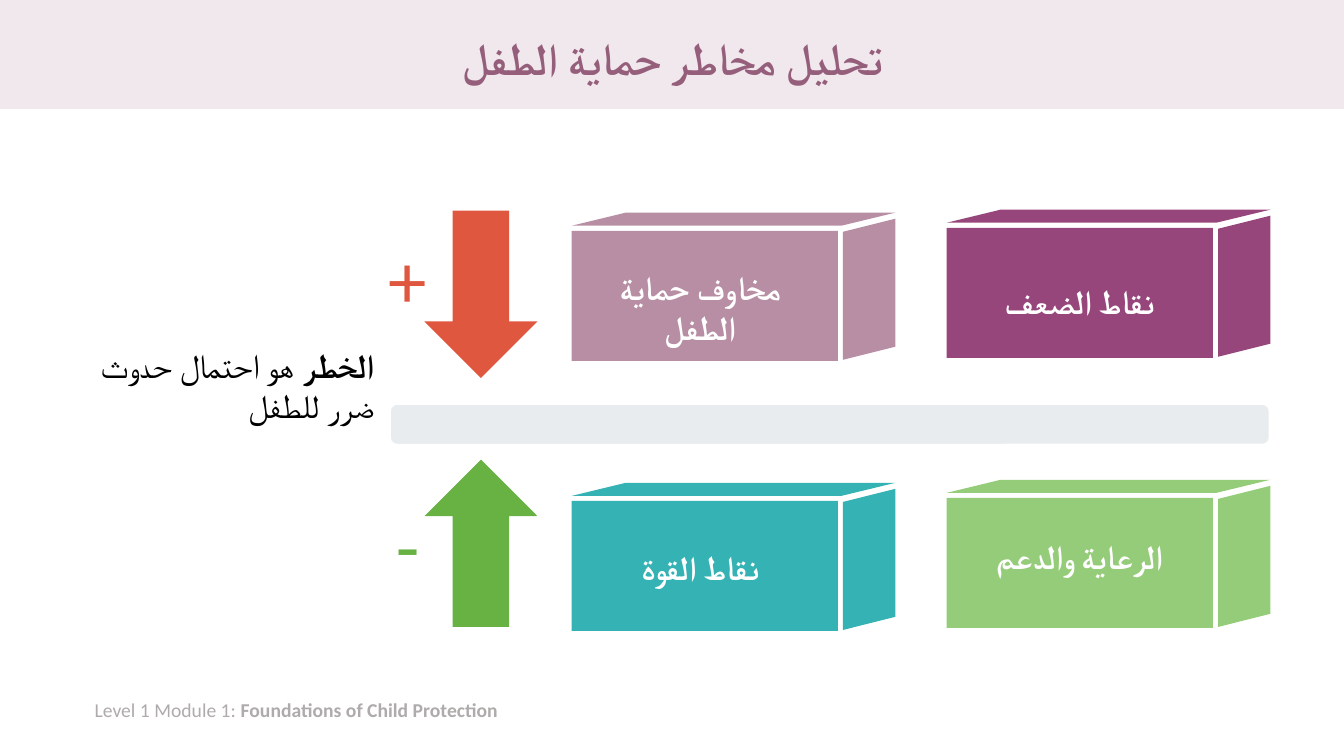
from pptx import Presentation
from pptx.dml.color import RGBColor
from pptx.enum.shapes import MSO_SHAPE as Shape
from pptx.enum.text import MSO_ANCHOR as Anchor, PP_ALIGN as Align
from pptx.oxml.ns import qn
from pptx.util import Inches, Pt
from lxml.etree import SubElement

COLORS = {
    "band": "F1E8ED", "title": "955F7B", "footer": "AFABAB", "text": "000000",
    "white": "FFFFFF", "bar": "E8ECEF", "risk": "E05740", "safety": "68B143",
    "concerns": "B78EA3", "weaknesses": "97467C",
    "strengths": "35B2B4", "support": "95CC79",
}


class SlideBuilder:
    def __init__(self, presentation):
        self.slide = presentation.slides.add_slide(presentation.slide_layouts[5])
        self.font = "Calibri"

    def color(self, name):
        return RGBColor.from_string(COLORS[name])

    def shape(self, kind, box, fill, line=None, parent=None):
        shapes = (parent or self.slide).shapes
        shape = shapes.add_shape(kind, *map(Inches, box))
        shape.shadow.inherit = False
        shape.fill.solid()
        shape.fill.fore_color.rgb = self.color(fill)
        if line:
            shape.line.color.rgb = self.color(line)
            shape.line.width = Pt(1)
        else:
            shape.line.fill.background()
        return shape

    def add_runs(self, frame, runs, size, color, align=Align.CENTER, rtl=True,
                 font=None, script_font=True):
        """Fill the frame with (text, bold) runs; script_font also covers Arabic."""
        frame.word_wrap = True
        paragraph = frame.paragraphs[0]
        paragraph.alignment = align
        if rtl:
            paragraph._p.get_or_add_pPr().set("rtl", "1")
        for text, bold in runs:
            run = paragraph.add_run()
            run.text = text
            run.font.name = font or self.font
            run.font.size = Pt(size)
            run.font.bold = bold
            run.font.color.rgb = self.color(color)
            if script_font:
                properties = run._r.get_or_add_rPr()
                SubElement(properties, qn("a:cs"), typeface=font or self.font)
        return paragraph

    def text(self, box, runs, size, color, **style):
        text_box = self.slide.shapes.add_textbox(*map(Inches, box))
        self.add_runs(text_box.text_frame, runs, size, color, **style)

    def title(self, box, text):
        title = self.slide.shapes.title
        title.left, title.top, title.width, title.height = map(Inches, box)
        title.text_frame.vertical_anchor = Anchor.MIDDLE
        paragraph = self.add_runs(title.text_frame, [(text, True)], 32, "title")
        paragraph.line_spacing = 0.9
        # Keep the title above the band
        self.slide.shapes._spTree.append(title._element)

    def block(self, left, top, fill):
        """Draw a box in perspective: top face, front face and right side."""
        group = self.slide.shapes.add_group_shape()
        self.shape(Shape.RECTANGLE, (left, top + 0.18, 2.64, 1.29), fill, parent=group)
        side = self.shape(Shape.PARALLELOGRAM, (left + 2.25, top + 0.5, 1.4, 0.52),
                          fill, parent=group)
        side.rotation = 270
        side._element.spPr.xfrm.set("flipH", "1")
        lid = self.shape(Shape.PARALLELOGRAM, (left, top, 3.21, 0.13), fill, parent=group)
        lid.adjustments[0] = 4.127

    def arrow(self, top, fill, sign, sign_top, rotation=0):
        arrow = self.shape(Shape.DOWN_ARROW, (4.21, top, 1.12, 1.66), fill)
        arrow.rotation = rotation
        self.text((3.65, sign_top, 0.79, 0.98), [(sign, False)], 52, fill, font="Lato")


def main():
    presentation = Presentation()
    presentation.slide_width = Inches(13.33)
    presentation.slide_height = Inches(7.5)
    builder = SlideBuilder(presentation)

    builder.shape(Shape.RECTANGLE, (0, 0, 13.33, 1.08), "band")
    builder.title((0.92, 0.13, 11.5, 0.95), "تحليل مخاطر حماية الطفل")
    builder.text((0.84, 6.87, 11.35, 0.34),
                 [("Level 1 Module 1: ", False), ("Foundations of Child Protection", True)],
                 14, "footer", align=Align.LEFT, rtl=False)

    builder.arrow(2.09, "risk", "+", 2.29)
    builder.arrow(4.56, "safety", "-", 4.93, rotation=180)
    builder.text((0.74, 3.37, 3.07, 0.91),
                 [("الخطر ", True), ("هو احتمال حدوث ضرر للطفل", False)],
                 24, "text", align=Align.RIGHT, script_font=False)
    builder.shape(Shape.ROUNDED_RECTANGLE, (3.87, 4.01, 8.72, 0.4), "bar", line="white")

    blocks = [
        (5.67, 2.11, "concerns", "مخاوف حماية الطفل", (5.85, 2.6, 2.19, 0.91)),
        (9.39, 2.08, "weaknesses", "نقاط الضعف", (9.61, 2.74, 2.19, 0.5)),
        (5.67, 4.79, "strengths", "نقاط القوة", (5.85, 5.38, 2.19, 0.5)),
        (9.39, 4.76, "support", "الرعاية والدعم", (9.61, 5.27, 2.19, 0.5)),
    ]
    for left, top, fill, label, label_box in blocks:
        builder.block(left, top, fill)
        builder.text(label_box, [(label, True)], 24, "white")

    presentation.save("out.pptx")


if __name__ == "__main__":
    main()
